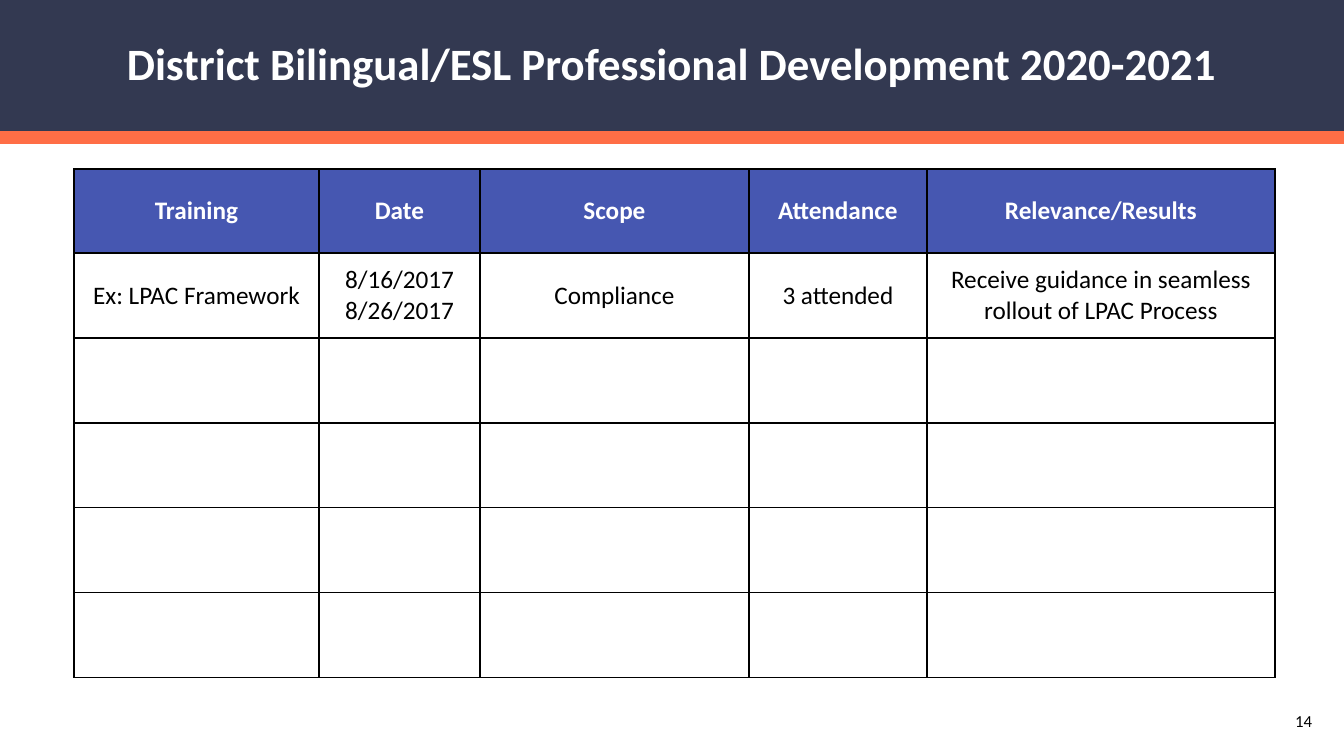
"""Build the district bilingual/ESL professional development slide."""
from lxml.etree import SubElement
from pptx import Presentation
from pptx.dml.color import RGBColor
from pptx.enum.shapes import MSO_SHAPE
from pptx.enum.text import MSO_ANCHOR, PP_ALIGN
from pptx.oxml.ns import qn
from pptx.util import Pt

EMU_PER_PX = 914400 / 100.8
WIDTH, HEIGHT = 1344, 756
FONT = "Calibri"
WHITE, BLACK = "FFFFFF", "000000"
NAVY, ORANGE, BLUE = "333951", "FF6E46", "4657B1"

COLUMN_WIDTHS = [245, 161, 269, 178, 348]
HEADER_HEIGHT, ROW_HEIGHT = 84, 85
BLANK_ROWS = 4
HEADERS = ["Training", "Date", "Scope", "Attendance", "Relevance/Results"]
EXAMPLE = [
    "Ex: LPAC Framework",
    "8/16/2017\v8/26/2017",
    "Compliance",
    "3 attended",
    "Receive guidance in seamless rollout of LPAC Process",
]


def px(n):
    return round(n * EMU_PER_PX)


def rgb(color):
    return RGBColor.from_string(color)


def write(tf, text, size, color, bold=False, align=PP_ALIGN.CENTER):
    p = tf.paragraphs[0]
    p.text = text
    p.alignment = align
    p.font.name = FONT
    p.font.size = Pt(size)
    p.font.bold = bold
    p.font.color.rgb = rgb(color)
    return p


def add_band(s, top, height, color):
    sp = s.shapes.add_shape(MSO_SHAPE.RECTANGLE, 0, px(top), px(WIDTH), px(height))
    sp.shadow.inherit = False
    sp.fill.solid()
    sp.fill.fore_color.rgb = rgb(color)
    sp.line.fill.background()


def place_title(s, text):
    sp = s.shapes.title
    sp.left, sp.top, sp.width, sp.height = px(92), 0, px(1160), px(131)
    s.shapes._spTree.append(sp._element)
    tf = sp.text_frame
    tf.word_wrap = True
    tf.vertical_anchor = MSO_ANCHOR.MIDDLE
    write(tf, text, 32, WHITE, bold=True).line_spacing = 0.9


def add_slide_number(s, text):
    tf = s.shapes.add_textbox(px(1020), px(701), px(302), px(40)).text_frame
    tf.word_wrap = True
    tf.vertical_anchor = MSO_ANCHOR.MIDDLE
    write(tf, text, 12, BLACK, align=PP_ALIGN.RIGHT)


def set_borders(cell, color, width):
    tc_pr = cell._tc.get_or_add_tcPr()
    for i, side in enumerate(("a:lnL", "a:lnR", "a:lnT", "a:lnB")):
        ln = SubElement(tc_pr, qn(side), w=str(Pt(width)))
        fill = SubElement(ln, qn("a:solidFill"))
        SubElement(fill, qn("a:srgbClr"), val=color)
        tc_pr.insert(i, ln)


def format_cell(cell, text, fill, color, bold):
    cell.vertical_anchor = MSO_ANCHOR.MIDDLE
    cell.fill.solid()
    cell.fill.fore_color.rgb = rgb(fill)
    set_borders(cell, BLACK, 1)
    write(cell.text_frame, text, 18, color, bold)


def add_training_table(s):
    rows = [HEADERS, EXAMPLE] + [[""] * len(HEADERS)] * BLANK_ROWS
    heights = [HEADER_HEIGHT] + [ROW_HEIGHT] * (len(rows) - 1)
    table = s.shapes.add_table(
        len(rows), len(HEADERS), px(74), px(169),
        px(sum(COLUMN_WIDTHS)), px(sum(heights)),
    ).table
    for column, width in zip(table.columns, COLUMN_WIDTHS):
        column.width = px(width)
    for r, (texts, height) in enumerate(zip(rows, heights)):
        table.rows[r].height = px(height)
        header = r == 0
        fill, color = (BLUE, WHITE) if header else (WHITE, BLACK)
        for c, text in enumerate(texts):
            format_cell(table.cell(r, c), text, fill, color, header)


def main():
    prs = Presentation()
    prs.slide_width, prs.slide_height = px(WIDTH), px(HEIGHT)
    s = prs.slides.add_slide(prs.slide_layouts.get_by_name("Title Only"))
    add_band(s, 89, 55, ORANGE)
    add_band(s, 0, 131, NAVY)
    place_title(s, "District Bilingual/ESL Professional Development 2020-2021")
    add_slide_number(s, "14")
    add_training_table(s)
    prs.save("out.pptx")


if __name__ == "__main__":
    main()
